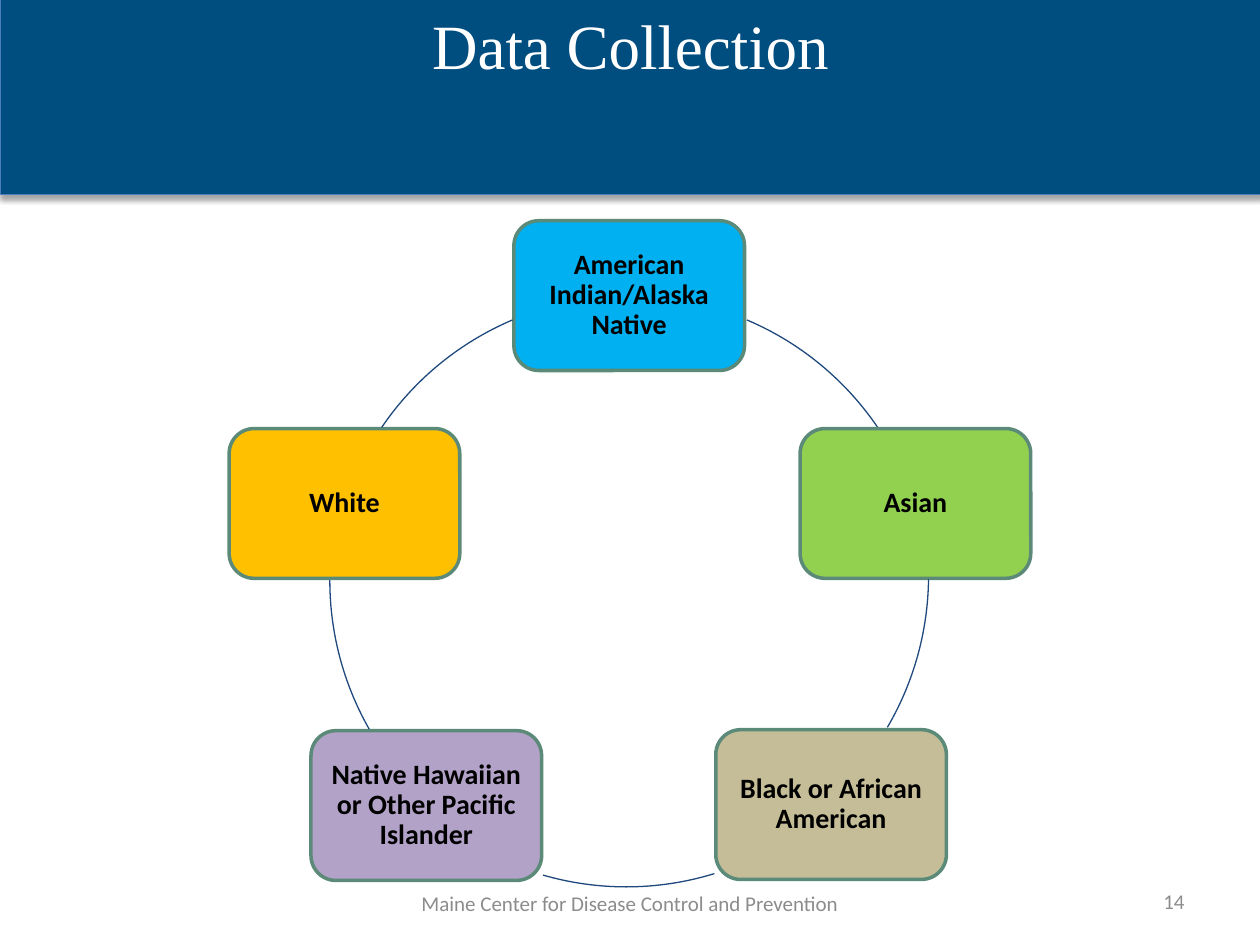
from dataclasses import dataclass

import pptx
import pptx.dml.color
import pptx.enum.shapes
import pptx.enum.text
import pptx.oxml
import pptx.oxml.ns
import pptx.util
from pptx.util import Cm

COLORS = {
    "band": "004D80", "band_line": "4B7EBC", "title": "FFFFFF",
    "blue": "00B0F0", "green": "92D050", "tan": "C4BD97",
    "purple": "B3A2C7", "gold": "FFC000",
    "border": "5C8A78", "arc": "1F497D", "label": "000000", "footer": "8C8C8C",
}
BOX_W, BOX_H = 4.65, 3.02
RING_D = 12.09
SHAPES = pptx.enum.shapes.MSO_SHAPE
ALIGN = pptx.enum.text.PP_ALIGN
ANCHOR = pptx.enum.text.MSO_ANCHOR


@dataclass
class Category:
    label: str
    left: float
    top: float
    color: str


@dataclass
class Arc:
    """Part of a circle, in degrees clockwise from three o'clock."""
    left: float
    top: float
    start: float
    end: float


CATEGORIES = [
    Category("American Indian/Alaska Native", 10.36, 4.45, "blue"),
    Category("Asian", 16.13, 8.64, "green"),
    Category("Black or African American", 14.43, 14.71, "tan"),
    Category("Native Hawaiian or Other Pacific Islander", 6.27, 14.73, "purple"),
    Category("White", 4.62, 8.64, "gold"),
]
ARCS = [
    Arc(6.65, 5.97, 293, 325.8),
    Arc(6.63, 5.56, 0.7, 30.4),
    Arc(6.58, 5.79, 72.9, 106.1),
    Arc(6.65, 5.66, 150.3, 180.2),
    Arc(6.65, 5.97, 214.2, 247),
]


def rgb(name: str) -> pptx.dml.color.RGBColor:
    return pptx.dml.color.RGBColor.from_string(COLORS[name])


def set_line(sp, color: str, width: float) -> None:
    sp.line.color.rgb = rgb(color)
    sp.line.width = pptx.util.Pt(width)


def write(sp, text: str, size: float, color: str, align=ALIGN.CENTER,
          font: str = "Calibri", bold: bool = False):
    """Put one paragraph in the shape and return it."""
    tf = sp.text_frame
    tf.word_wrap = True
    tf.vertical_anchor = ANCHOR.MIDDLE
    p = tf.paragraphs[0]
    p.alignment = align
    r = p.add_run()
    r.text = text
    r.font.size = pptx.util.Pt(size)
    r.font.name = font
    r.font.bold = bold
    r.font.color.rgb = rgb(color)
    return p


def add_band(s, title: str) -> None:
    sp = s.shapes.add_shape(SHAPES.RECTANGLE, Cm(0), Cm(-0.08), Cm(25.43), Cm(4.01))
    sp.fill.solid()
    sp.fill.fore_color.rgb = rgb("band")
    set_line(sp, "band_line", 0.75)
    sp.shadow.inherit = False
    effects = sp.element.spPr.find(pptx.oxml.ns.qn("a:effectLst"))
    effects.append(pptx.oxml.parse_xml(
        f'<a:outerShdw {pptx.oxml.ns.nsdecls("a")} blurRad="39400" dist="22900" '
        'dir="5400000" rotWithShape="0"><a:srgbClr val="000000">'
        '<a:alpha val="35000"/></a:srgbClr></a:outerShdw>'))
    write(sp, title, 36, "title", font="Times New Roman")
    sp.text_frame.vertical_anchor = ANCHOR.TOP
    sp.text_frame.margin_top = Cm(0.22)


def add_arc(s, arc: Arc) -> None:
    sp = s.shapes.add_shape(SHAPES.ARC, Cm(arc.left), Cm(arc.top), Cm(RING_D), Cm(RING_D))
    # Angles are stored in 1/60000 degree, adjustments in 1/100000.
    sp.adjustments[0] = arc.start * 0.6
    sp.adjustments[1] = arc.end * 0.6
    sp.fill.background()
    set_line(sp, "arc", 0.75)
    sp.shadow.inherit = False


def add_category(s, category: Category) -> None:
    sp = s.shapes.add_shape(SHAPES.ROUNDED_RECTANGLE, Cm(category.left),
                            Cm(category.top), Cm(BOX_W), Cm(BOX_H))
    sp.fill.solid()
    sp.fill.fore_color.rgb = rgb(category.color)
    set_line(sp, "border", 2)
    sp.shadow.inherit = False
    tf = sp.text_frame
    tf.margin_left = tf.margin_right = tf.margin_top = tf.margin_bottom = Cm(0.18)
    p = write(sp, category.label, 16, "label", bold=True)
    p.line_spacing = 0.9


def add_footer(s, text: str, left: float, top: float, width: float, align) -> None:
    sp = s.shapes.add_textbox(Cm(left), Cm(top), Cm(width), Cm(1.02))
    write(sp, text, 12, "footer", align)


def main() -> None:
    prs = pptx.Presentation()
    prs.slide_width, prs.slide_height = Cm(25.4), Cm(19.05)
    s = prs.slides.add_slide(prs.slide_layouts[6])
    add_band(s, "Data Collection")
    add_footer(s, "14", 18.21, 17.65, 5.92, ALIGN.RIGHT)
    add_footer(s, "Maine Center for Disease Control and Prevention",
               7.62, 17.7, 10.16, ALIGN.CENTER)
    for category, arc in zip(CATEGORIES, ARCS):
        add_category(s, category)
        add_arc(s, arc)
    prs.save("out.pptx")


if __name__ == "__main__":
    main()
